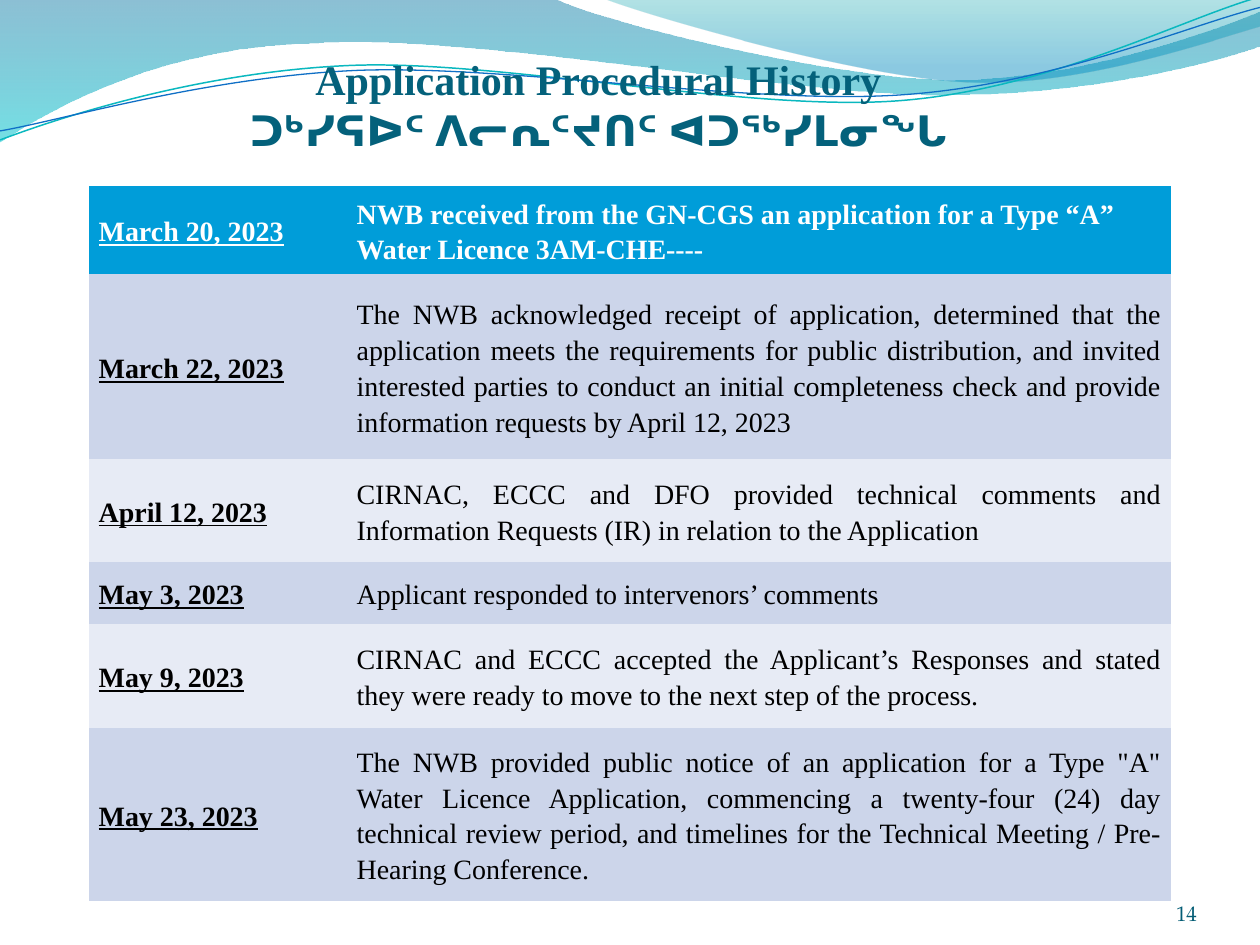
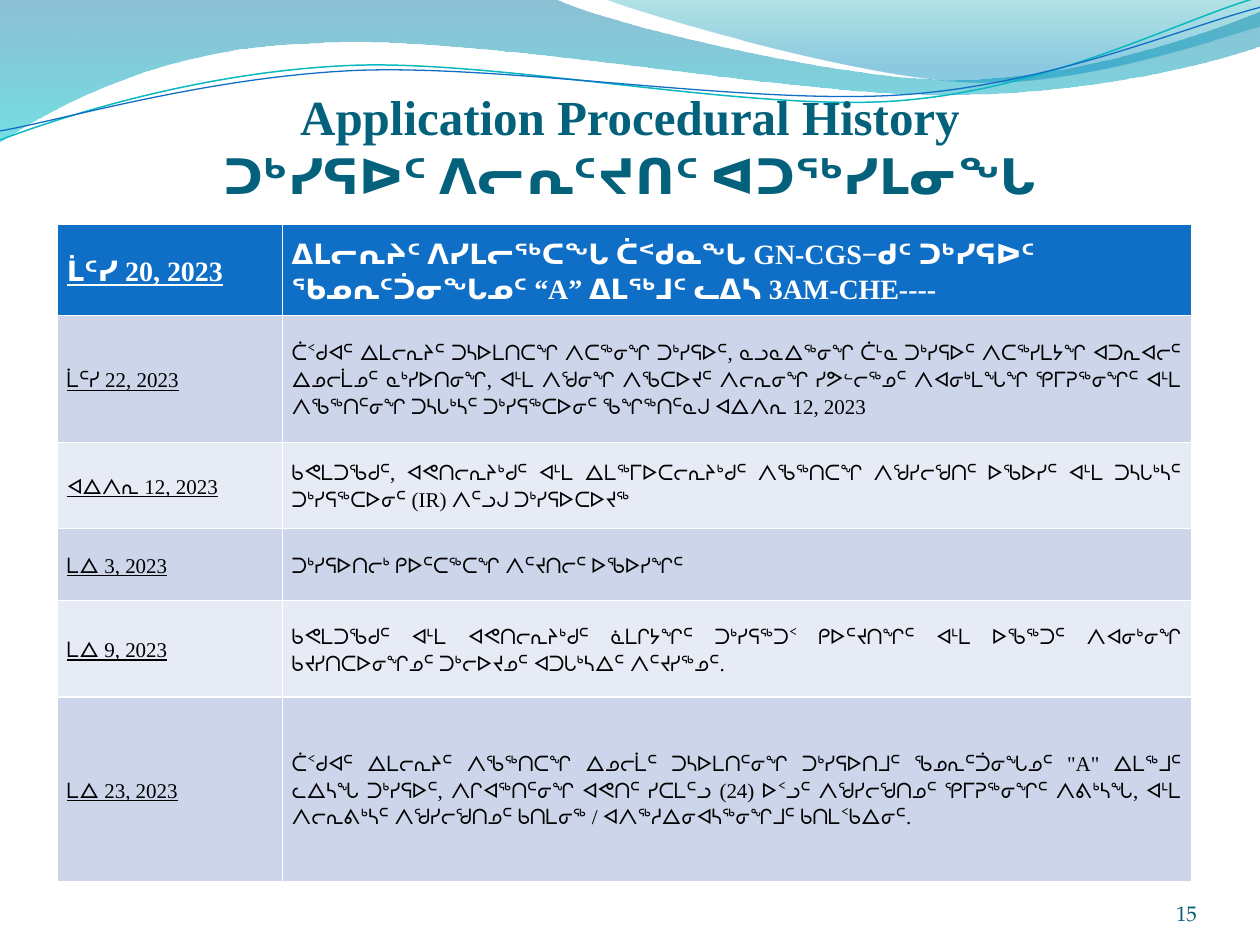
"""Build two slides on the procedural history of a water licence application."""
import math
import lxml.etree
import pptx
import pptx.dml.color
import pptx.enum.text
import pptx.oxml.ns
import pptx.util

TITLE_LINES = ["Application Procedural History", "ᑐᒃᓯᕋᐅᑦ ᐱᓕᕆᑦᔪᑎᑦ ᐊᑐᖅᓯᒪᓂᖓ"]
ENGLISH_HISTORY = [
    ("March 20, 2023", "NWB received from the GN-CGS an application for a Type “A” Water Licence "
     "3AM-CHE----"),
    ("March 22, 2023", "The NWB acknowledged receipt of application, determined that the application "
     "meets the requirements for public distribution, and invited interested parties to conduct an "
     "initial completeness check and provide information requests by April 12, 2023"),
    ("April 12, 2023", "CIRNAC, ECCC and DFO provided technical comments and Information Requests (IR) "
     "in relation to the Application"),
    ("May 3, 2023", "Applicant responded to intervenors’ comments"),
    ("May 9, 2023", "CIRNAC and ECCC accepted the Applicant’s Responses and stated they were ready to "
     "move to the next step of the process."),
    ("May 23, 2023", "The NWB provided public notice of an application for a Type \"A\" Water Licence "
     "Application, commencing a twenty-four (24) day technical review period, and timelines for the "
     "Technical Meeting / Pre-Hearing Conference."),
]
INUKTITUT_HISTORY = [
    ("ᒫᑦᓯ 20, 2023", "ᐃᒪᓕᕆᔨᑦ ᐱᓯᒪᓕᖅᑕᖓ ᑖᑉᑯᓇᖓ GN-CGS−ᑯᑦ ᑐᒃᓯᕋᐅᑦ ᖃᓄᕆᑦᑑᓂᖓᓄᑦ “A” ᐃᒪᖅᒧᑦ ᓚᐃᓴ "
     "3AM-CHE----"),
    ("ᒫᑦᓯ 22, 2023", "ᑖᑉᑯᐊᑦ ᐃᒪᓕᕆᔨᑦ ᑐᓴᐅᒪᑎᑕᖏ ᐱᑕᖅᓂᖏ ᑐᒃᓯᕋᐅᑦ, ᓇᓗᓇᐃᖅᓂᖏ ᑖᒻᓇ ᑐᒃᓯᕋᐅᑦ ᐱᑕᖅᓯᒪᔭᖏ "
     "ᐊᑐᕆᐊᓕᑦ ᐃᓄᓕᒫᓄᑦ ᓇᒃᓯᐅᑎᓂᖏ, ᐊᒻᒪ ᐱᖁᓂᖏ ᐱᖃᑕᐅᔪᑦ ᐱᓕᕆᓂᖏ ᓯᕗᓪᓕᖅᓄᑦ ᐱᐊᓂᒃᒪᖓᖏ ᕿᒥᕈᖅᓂᖏᑦ ᐊᒻᒪ "
     "ᐱᖃᖅᑎᑦᓂᖏ ᑐᓴᒐᒃᓴᑦ ᑐᒃᓯᕋᖅᑕᐅᓂᑦ ᖃᖏᖅᑎᑦᓇᒍ ᐊᐃᐱᕆ 12, 2023"),
    ("ᐊᐃᐱᕆ 12, 2023", "ᑲᕙᒪᑐᖃᑯᑦ, ᐊᕙᑎᓕᕆᔨᒃᑯᑦ ᐊᒻᒪ ᐃᒪᖅᒥᐅᑕᓕᕆᔨᒃᑯᑦ ᐱᖃᖅᑎᑕᖏ ᐱᖁᓯᓕᖁᑎᑦ ᐅᖃᐅᓯᑦ ᐊᒻᒪ "
     "ᑐᓴᒐᒃᓴᑦ ᑐᒃᓯᕋᖅᑕᐅᓂᑦ (IR) ᐱᑦᓗᒍ ᑐᒃᓯᕋᐅᑕᐅᔪᖅ"),
    ("ᒪᐃ 3, 2023", "ᑐᒃᓯᕋᐅᑎᓕᒃ ᑭᐅᑦᑕᖅᑕᖏ ᐱᑦᔪᑎᓕᑦ ᐅᖃᐅᓯᖏᑦ"),
    ("ᒪᐃ 9, 2023", "ᑲᕙᒪᑐᖃᑯᑦ ᐊᒻᒪ ᐊᕙᑎᓕᕆᔨᒃᑯᑦ ᓈᒪᒋᔭᖏᑦ ᑐᒃᓯᕋᖅᑐᑉ ᑭᐅᑦᔪᑎᖏᑦ ᐊᒻᒪ ᐅᖃᖅᑐᑦ ᐱᐊᓂᒃᓂᖏ "
     "ᑲᔪᓯᑎᑕᐅᓂᖏᓄᑦ ᑐᒃᓕᐅᔪᓄᑦ ᐊᑐᒐᒃᓴᐃᑦ ᐱᑦᔪᓯᖅᓄᑦ."),
    ("ᒪᐃ 23, 2023", "ᑖᑉᑯᐊᑦ ᐃᒪᓕᕆᔨᑦ ᐱᖃᖅᑎᑕᖏ ᐃᓄᓕᒫᑦ ᑐᓴᐅᒪᑎᑦᓂᖏ ᑐᒃᓯᕋᐅᑎᒧᑦ ᖃᓄᕆᑦᑑᓂᖓᓄᑦ \"A\" ᐃᒪᖅᒧᑦ "
     "ᓚᐃᓴᖓ ᑐᒃᓯᕋᐅᑦ, ᐱᒋᐊᖅᑎᑦᓂᖏ ᐊᕙᑎᑦ ᓯᑕᒪᑦᓗ (24) ᐅᑉᓗᑦ ᐱᖁᓯᓕᖁᑎᓄᑦ ᕿᒥᕈᖅᓂᖏᑦ ᐱᕕᒃᓴᖓ, ᐊᒻᒪ "
     "ᐱᓕᕆᕕᒃᓴᑦ ᐱᖁᓯᓕᖁᑎᓄᑦ ᑲᑎᒪᓂᖅ / ᐊᐱᖅᓱᐃᓂᐊᓴᖅᓂᖏᒧᑦ ᑲᑎᒪᑉᑲᐃᓂᑦ."),
]
PLAIN_STYLE = "{2D5ABB26-0587-4C30-8999-92F81FD0307C}"
RULED_STYLE = "{5C22544A-7EE6-4342-B048-85BDC9FD1C3A}"
PAGES = [
    dict(number="14", title_at=(0, 0.91, 24.13, 2.21), title_size=24, history=ENGLISH_HISTORY,
         table_at=(1.8, 3.75), columns=(5.2, 16.6), rows=(1.78, 3.73, 2.07, 1.25, 2.09, 3.49),
         header_fill="009DD9", body_size=16, bold_dates=True, table_style=PLAIN_STYLE),
    dict(number="15", title_at=(1.27, 1.32, 22.86, 2.79), title_size=28, history=INUKTITUT_HISTORY,
         table_at=(1.16, 4.53), columns=(4.53, 18.33), rows=(1.83, 2.56, 1.73, 1.46, 1.94, 3.72),
         header_fill="0F6FC6", body_size=12, bold_dates=False, table_style=RULED_STYLE),
]
NUMBER_AT = (22.02, 17.65, 2.11, 1.02)
BODY_FILLS = ["E7EBF5", "CCD5EA"]
SERIF, NUMBER_FONT = "Times New Roman", "TeX Gyre Pagella"

BANDS = [
    ([(0, 0), (11.18, -0.03), (12.09, 0.43, 16.87, 1.6, 19.25, 1.6),
      (21.67, 1.6, 24.33, 0.66, 25.4, 0.23), (25.43, 0.91),
      (24.97, 1.12, 22.1, 1.93, 18.95, 1.91), (15.8, 1.91, 9.7, 0.71, 6.53, 0.86),
      (3.28, 0.91, 1.17, 2.11, -0.03, 2.87), (0, 0)],
     [(0, "0074A1", 45), (1, "00C6CF", 55)]),
    ([(12.17, -0.03), (12.93, 0.28, 17.32, 1.57, 19.53, 1.65),
      (21.74, 1.75, 24.41, 0.81, 25.4, 0.53), (25.4, 0), (12.17, -0.03)],
     [(0, "00A1A9", 30), (0.8, "008BBF", 45)]),
]
WAVES = [
    ([(0, 2.82), (1.22, 2.36, 4.01, 1.45, 7.04, 1.32), (10.03, 1.19, 15.06, 2.26, 18.11, 2.03),
      (21.16, 1.8, 23.83, 0.38, 25.35, -0.05)], (12.67, 1.46), "0AB8BF", 0.85),
    ([(0, 2.64), (1.19, 2.44, 4.17, 1.55, 7.19, 1.42), (10.24, 1.3, 15.16, 2.13, 18.21, 1.91),
      (21.23, 1.7, 23.9, 0.53, 25.4, 0.15)], (12.69, 1.5), "0F6FC6", 0.75),
]
WAVE_TILT = -2.7

Cm, Pt, qn = pptx.util.Cm, pptx.util.Pt, pptx.oxml.ns.qn
ALIGN, ANCHOR = pptx.enum.text.PP_ALIGN, pptx.enum.text.MSO_ANCHOR


def color(hex_text):
    return pptx.dml.color.RGBColor.from_string(hex_text)


def write(frame, *lines, size, hex_text, font=SERIF, bold=False, underline=False,
          align=ALIGN.LEFT, spacing=None, after=None):
    para = frame.paragraphs[0]
    para.alignment = align
    if spacing:
        para.line_spacing = spacing
    if after:
        para.space_after = Pt(after)
    for index, line in enumerate(lines):
        if index:
            para.add_line_break()
        span = para.add_run()
        span.text = line
        span.font.name, span.font.size = font, Pt(size)
        span.font.bold, span.font.underline = bold, underline
        span.font.color.rgb = color(hex_text)


def add_text(page, at, *lines, top=0, **text_format):
    box = page.shapes.add_textbox(*map(Cm, at))
    frame = box.text_frame
    frame.word_wrap = True
    frame.vertical_anchor = ANCHOR.BOTTOM
    frame.margin_left = frame.margin_right = frame.margin_bottom = 0
    frame.margin_top = Cm(top)
    write(frame, *lines, **text_format)


def turn(point, center, degrees):
    angle = math.radians(degrees)
    across, down = point[0] - center[0], point[1] - center[1]
    return (center[0] + across * math.cos(angle) - down * math.sin(angle),
            center[1] + across * math.sin(angle) + down * math.cos(angle))


def add_outline(page, outline, closed, center=(0, 0), tilt=0):
    segments = [[tuple(map(Cm, turn(segment[i:i + 2], center, -tilt)))
                 for i in range(0, len(segment), 2)] for segment in outline]
    start, *ends = [segment[-1] for segment in segments]
    builder = page.shapes.build_freeform(*start)
    builder.add_line_segments(ends, close=closed)
    shape = builder.convert_to_shape()
    shape.shadow.inherit = False
    straight_lines = list(shape._element.iter(qn("a:lnTo")))
    for line, segment in zip(straight_lines, segments[1:]):
        if len(segment) == 3:
            line.tag
            curve = lxml.etree.Element(qn("a:cubicBezTo"))
            for x, y in segment:
                lxml.etree.SubElement(curve, qn("a:pt"), x=str(x - shape.left), y=str(y - shape.top))
            line.getparent().replace(line, curve)
    shape.rotation = tilt
    return shape


def add_backdrop(page):
    for outline, stops in BANDS:
        band = add_outline(page, outline, True)
        band.line.fill.background()
        band.fill.gradient()
        band.fill.gradient_angle = 270
        for stop, (position, hex_text, _) in zip(band.fill.gradient_stops, stops):
            stop.position, stop.color.rgb = position, color(hex_text)
        tints = list(band._element.spPr.find(qn("a:gradFill")).iter(qn("a:srgbClr")))
        for tint, (_, _, opacity) in zip(tints, stops):
            lxml.etree.SubElement(tint, qn("a:alpha"), val=str(opacity * 1000))
    for outline, center, hex_text, width in WAVES:
        wave = add_outline(page, outline, False, center, WAVE_TILT)
        wave.fill.background()
        wave.line.color.rgb, wave.line.width = color(hex_text), Pt(width)


def add_history(page, content):
    widths, heights = content["columns"], content["rows"]
    frame = page.shapes.add_table(len(heights), len(widths), *map(Cm, content["table_at"]),
                                  Cm(sum(widths)), Cm(sum(heights)))
    table = frame.table
    table._tbl.tblPr.find(qn("a:tableStyleId")).text = content["table_style"]
    for column, width in zip(table.columns, widths):
        column.width = Cm(width)
    for row, (height, entry) in enumerate(zip(heights, content["history"])):
        table.rows[row].height = Cm(height)
        header = row == 0
        for column, text in enumerate(entry):
            is_date = column == 0
            cell = table.cell(row, column)
            cell.margin_left = cell.margin_right = Cm(0.19)
            cell.margin_top = cell.margin_bottom = 0
            cell.vertical_anchor = ANCHOR.MIDDLE
            cell.fill.solid()
            cell.fill.fore_color.rgb = color(content["header_fill"] if header else BODY_FILLS[row % 2])
            write(cell.text_frame, text, size=16 if header else content["body_size"],
                  hex_text="FFFFFF" if header else "000000",
                  bold=header or (is_date and content["bold_dates"]), underline=is_date,
                  align=ALIGN.LEFT if header or is_date else ALIGN.JUSTIFY, spacing=1.15, after=10)


def main():
    deck = pptx.Presentation()
    deck.slide_width, deck.slide_height = Cm(25.4), Cm(19.05)
    for content in PAGES:
        page = deck.slides.add_slide(deck.slide_layouts[6])
        add_backdrop(page)
        add_text(page, content["title_at"], *TITLE_LINES, top=0.13, size=content["title_size"],
                 hex_text="04617B", bold=True, align=ALIGN.CENTER)
        add_history(page, content)
        add_text(page, NUMBER_AT, content["number"], size=12, hex_text="045D75",
                 font=NUMBER_FONT, align=ALIGN.RIGHT)
    deck.save("out.pptx")


if __name__ == "__main__":
    main()
